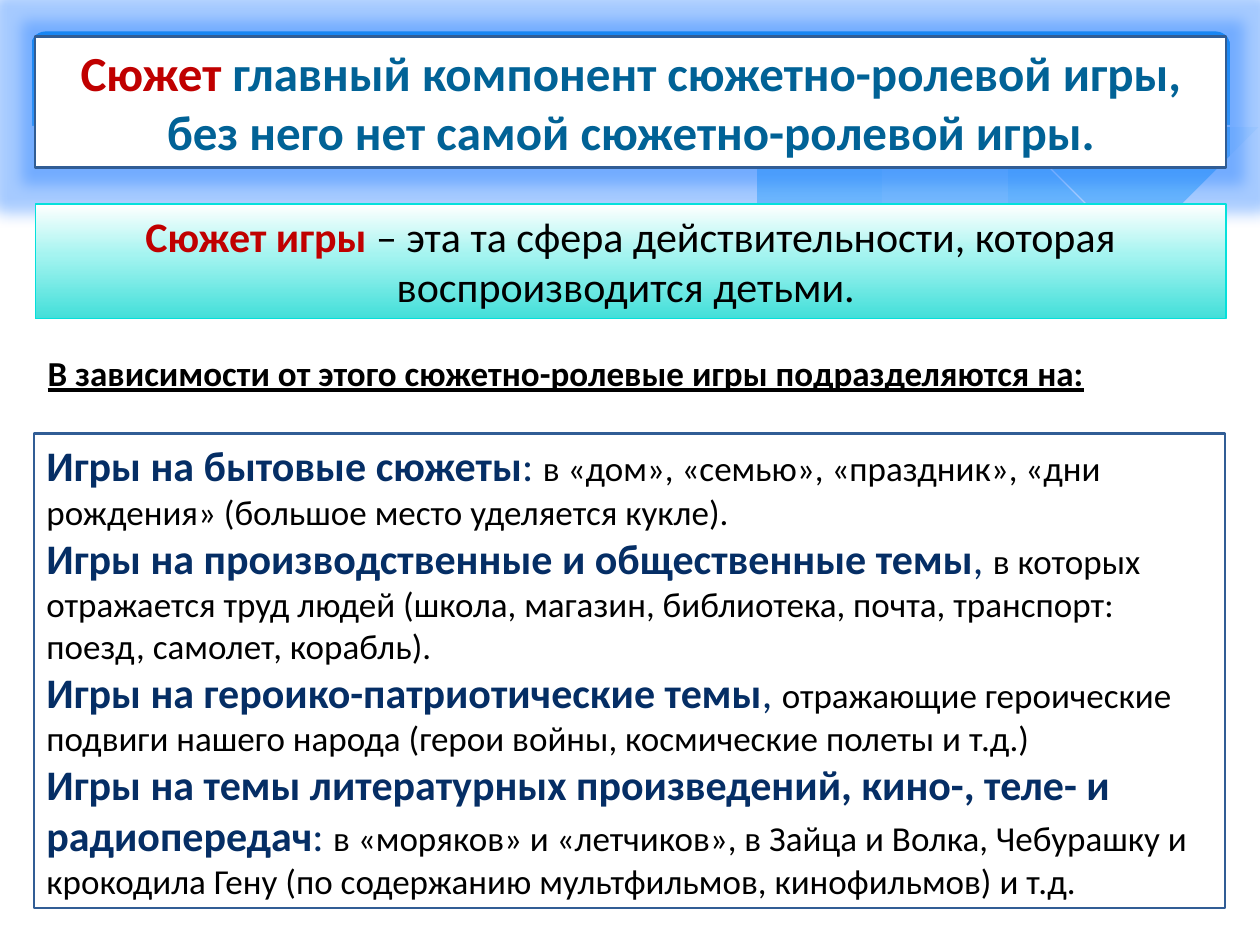
import pptx
import pptx.util
import pptx.dml.color
import pptx.enum.shapes
import pptx.enum.text
import pptx.oxml
import pptx.oxml.ns
from lxml import etree

Inches = pptx.util.Inches
Pt = pptx.util.Pt

COLORS = {
    "white": "FFFFFF", "black": "000000", "red": "C00000",
    "title": "016296", "navy": "052E65", "frame": "315D95",
    "turquoise": "05E0DB", "mist": "C6E7FC", "glow": "257FFF",
    "header top": "0293E0", "header bottom": "83D3FE",
    "aqua": "A5F4F0", "deep aqua": "42DFD9",
}
HEADER_STOPS = [(0, "header top"), (90, "header bottom")]
DEFINITION_STOPS = [(0, "white"), (44, "aqua"), (100, "deep aqua")]
LEFT, WIDTH = 0.28, 9.45


def rgb(name):
    return pptx.dml.color.RGBColor.from_string(COLORS[name])


def add_element(parent, tag, **attributes):
    element = etree.SubElement(parent, pptx.oxml.ns.qn(tag))
    for key, value in attributes.items():
        element.set(key, str(value))
    return element


def span(text, size=20, color="black", bold=False, underline=False):
    return text, size, color, bold, underline


def curve(knots, steps=5):
    padded = [knots[0], *knots, knots[-1]]
    points = [knots[0]]
    for a, b, c, d in zip(padded, padded[1:], padded[2:], padded[3:]):
        for step in range(1, steps + 1):
            t = step / steps
            points.append(tuple(
                (2 * q + (r - p) * t + (2 * p - 5 * q + 4 * r - s) * t ** 2
                 + (3 * q - p - 3 * r + s) * t ** 3) / 2
                for p, q, r, s in zip(a, b, c, d)))
    return points


class SlideBuilder:
    font = "Calibri"

    def __init__(self, page):
        self.page = page

    def shape(self, kind, left, top, width, height, fill=None, stops=None, line=None, weight=1.25):
        box = self.page.shapes.add_shape(
            kind, Inches(left), Inches(top), Inches(width), Inches(height))
        box.shadow.inherit = False
        if stops:
            self.gradient(box, stops)
        else:
            box.fill.solid()
            box.fill.fore_color.rgb = rgb(fill)
        self.outline(box, line, weight)
        return box

    def outline(self, box, color, weight):
        if color:
            box.line.color.rgb = rgb(color)
            box.line.width = Pt(weight)
        else:
            box.line.fill.background()

    def gradient(self, box, stops):
        box.fill.gradient()
        box.fill.gradient_angle = 270
        stop_list = box._element.spPr.find(".//" + pptx.oxml.ns.qn("a:gsLst"))
        for child in list(stop_list):
            stop_list.remove(child)
        for position, color in stops:
            stop = add_element(stop_list, "a:gs", pos=position * 1000)
            add_element(stop, "a:srgbClr", val=COLORS[color])

    def glow(self, box, color, radius, opacity):
        effects = box._element.spPr.find(pptx.oxml.ns.qn("a:effectLst"))
        halo = add_element(effects, "a:glow", rad=Inches(radius))
        tint = add_element(halo, "a:srgbClr", val=COLORS[color])
        add_element(tint, "a:alpha", val=opacity * 1000)

    def freeform(self, points, fill=None, opacity=100, line=None):
        builder = self.page.shapes.build_freeform(*points[0], scale=Inches(1))
        builder.add_line_segments(points[1:], close=fill is not None)
        form = builder.convert_to_shape()
        form.shadow.inherit = False
        if fill:
            form.fill.solid()
            form.fill.fore_color.rgb = rgb(fill)
            if opacity < 100:
                tint = form._element.spPr.find(".//" + pptx.oxml.ns.qn("a:srgbClr"))
                add_element(tint, "a:alpha", val=opacity * 1000)
        else:
            form.fill.background()
        self.outline(form, line, 0)

    def text_box(self, left, top, width, height):
        return self.page.shapes.add_textbox(
            Inches(left), Inches(top), Inches(width), Inches(height))

    def add_text(self, box, paragraphs, align="LEFT"):
        frame = box.text_frame
        frame.word_wrap = True
        frame.auto_size = pptx.enum.text.MSO_AUTO_SIZE.SHAPE_TO_FIT_TEXT
        frame.vertical_anchor = pptx.enum.text.MSO_ANCHOR.TOP
        for index, spans in enumerate(paragraphs):
            para = frame.add_paragraph() if index else frame.paragraphs[0]
            para.alignment = getattr(pptx.enum.text.PP_ALIGN, align)
            for text, size, color, bold, underline in spans:
                run = para.add_run()
                run.text = text
                run.font.name = self.font
                run.font.size = Pt(size)
                run.font.bold = bold
                run.font.underline = underline
                run.font.color.rgb = rgb(color)


def draw_header(slide):
    kinds = pptx.enum.shapes.MSO_SHAPE
    panel = slide.shape(kinds.ROUNDED_RECTANGLE, 0.25, 0.25, 9.51, 1.56, stops=HEADER_STOPS)
    panel.adjustments[0] = 0.07
    right_wave = [(9.76, 0.94), (9.21, 1.04), (8.61, 1.18), (7.53, 1.43), (6.61, 1.6)]
    right_return = [(6.61, 1.6), (7.19, 1.67), (7.81, 1.72), (8.35, 1.72), (8.81, 1.67),
                    (9.21, 1.6), (9.49, 1.52), (9.76, 1.41)]
    slide.freeform(curve(right_wave) + curve(right_return), "mist", 29)
    upper_edge = [(8.93, 1.67), (8.07, 1.54), (7.06, 1.34), (6.29, 1.16), (5.41, 0.97),
                  (4.65, 0.86), (3.8, 0.8), (2.86, 0.86)]
    lower_edge = [(2.86, 0.86), (3.62, 0.97), (4.49, 1.16), (5.66, 1.43), (6.5, 1.58),
                  (7.22, 1.68), (7.96, 1.73), (8.48, 1.72), (8.93, 1.67)]
    slide.freeform(curve(upper_edge) + curve(lower_edge), "mist", 40)
    for knots in (
        [(3.09, 0.9), (3.53, 0.84), (4.33, 0.82), (5.33, 0.88), (6.36, 1.03),
         (7.6, 1.28), (9.07, 1.66)],
        [(6.13, 1.51), (6.95, 1.3), (8.06, 1.04), (8.95, 0.88), (9.75, 0.8)],
    ):
        slide.freeform(curve(knots), line="white")
    white_edge = [(9.77, 1.41), (9.4, 1.54), (8.99, 1.64), (8.5, 1.7), (7.93, 1.71),
                  (7.26, 1.67), (6.48, 1.56), (5.55, 1.39), (4.47, 1.14), (3.4, 0.92),
                  (2.5, 0.81), (1.77, 0.78), (1.06, 0.83), (0.52, 0.96), (0.23, 1.07)]
    slide.freeform(curve(white_edge) + [(0.23, 2.24), (9.77, 2.24)], "white")


def topic(name, mark, details):
    return [span(name, 24, "navy", True), span(mark, 24, "navy"), span(details)]


def main():
    deck = pptx.Presentation()
    deck.slide_width, deck.slide_height = Inches(10), Inches(7.5)
    slide = SlideBuilder(deck.slides.add_slide(deck.slide_layouts[6]))
    rectangle = pptx.enum.shapes.MSO_SHAPE.RECTANGLE
    draw_header(slide)

    title = slide.shape(rectangle, LEFT, 0.29, WIDTH, 1.04, "white", line="frame")
    slide.glow(title, "glow", 0.25, 40)
    slide.add_text(title, [[
        span("Сюжет", 28, "red", True),
        span(" главный компонент сюжетно-ролевой игры, без него нет самой сюжетно-ролевой игры.",
             28, "title", True),
    ]], "CENTER")

    topics = slide.shape(rectangle, 0.27, 3.44, WIDTH, 3.77, "white", line="frame")
    slide.add_text(topics, [
        topic("Игры на бытовые сюжеты", ": ",
              "в «дом», «семью», «праздник», «дни рождения» (большое место уделяется кукле)."),
        topic("Игры на производственные и общественные темы", ", ",
              "в которых отражается труд людей (школа, магазин, библиотека, почта, "
              "транспорт: поезд, самолет, корабль)."),
        topic("Игры на героико-патриотические темы", ", ",
              "отражающие героические подвиги нашего народа "
              "(герои войны, космические полеты и т.д.)"),
        topic("Игры на темы литературных произведений, кино-, теле- и радиопередач", ": ",
              "в «моряков» и «летчиков», в Зайца и Волка, Чебурашку и крокодила Гену "
              "(по содержанию мультфильмов, кинофильмов) и т.д."),
    ])

    definition = slide.shape(rectangle, LEFT, 1.62, WIDTH, 0.91, stops=DEFINITION_STOPS,
                             line="turquoise", weight=0.75)
    slide.add_text(definition, [[
        span("Сюжет игры ", 24, "red", True),
        span("– эта та сфера действительности, которая воспроизводится детьми. ", 24),
    ]], "CENTER")

    slide.add_text(slide.text_box(LEFT, 2.74, WIDTH, 0.44), [[
        span("В зависимости от этого сюжетно-ролевые игры подразделяются на:",
             bold=True, underline=True),
    ]])
    deck.save("out.pptx")


if __name__ == "__main__":
    main()
